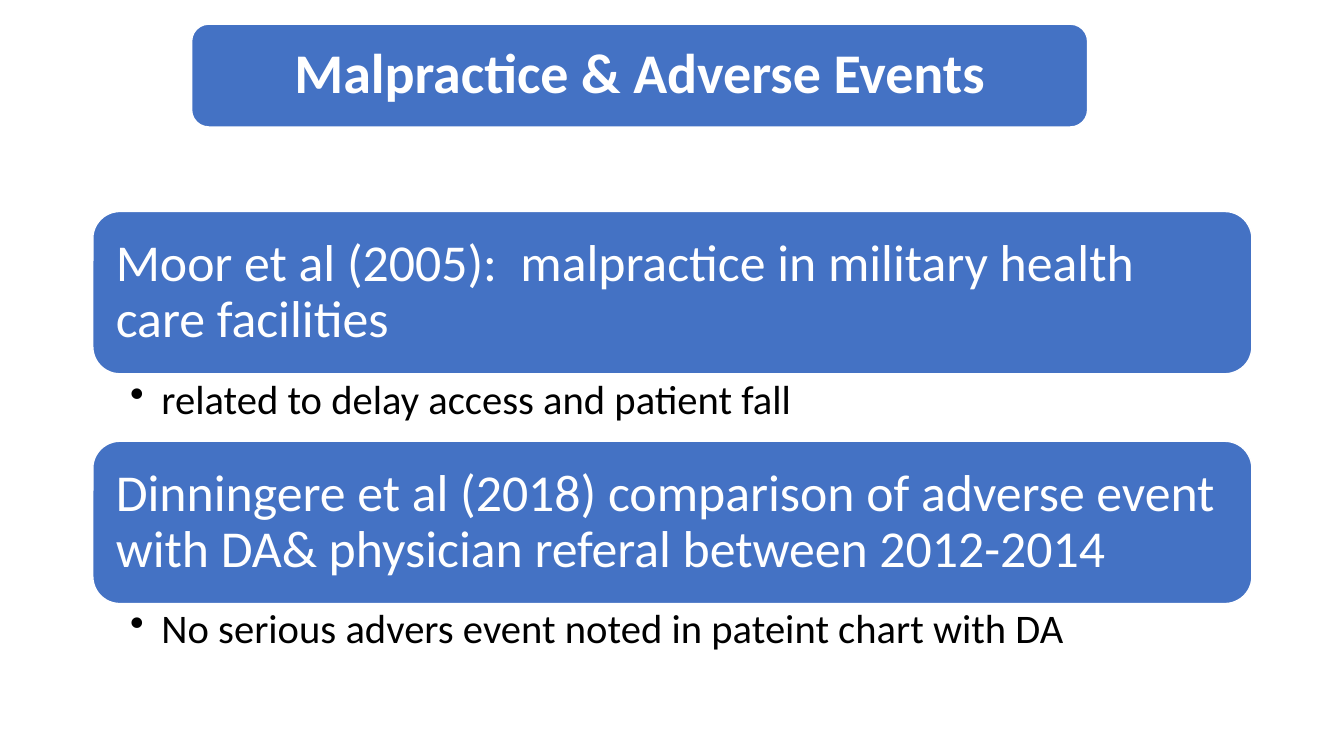
from lxml.etree import SubElement
from pptx import Presentation
from pptx.dml.color import RGBColor
from pptx.enum.shapes import MSO_SHAPE
from pptx.enum.text import MSO_ANCHOR, PP_ALIGN
from pptx.oxml.ns import qn
from pptx.util import Cm, Pt

COLORS = {"blue": "4472C4", "white": "FFFFFF", "black": "000000"}
LEFT, WIDTH = 2.34, 29.21
TOP, CARD, NOTE = 5.33, 4.09, 1.7
STUDIES = [
    ("Moor et al (2005):  malpractice in military health care facilities",
     "related to delay access and patient fall"),
    ("Dinningere et al (2018) comparison of adverse event with DA& physician "
     "referal between 2012-2014",
     "No serious advers event noted in pateint chart with DA"),
]


def color(name):
    return RGBColor.from_string(COLORS[name])


def write(frame, text, size, ink="white", bold=False, align=PP_ALIGN.LEFT,
          anchor=MSO_ANCHOR.MIDDLE, pads=(0.38,) * 4, indent=0):
    frame.word_wrap = True
    frame.vertical_anchor = anchor
    (frame.margin_left, frame.margin_top,
     frame.margin_right, frame.margin_bottom) = map(Cm, pads)
    para = frame.paragraphs[0]
    para.alignment = align
    para.line_spacing = 0.9
    run = para.add_run()
    run.text = text
    font = run.font
    font.name, font.size, font.bold = "Calibri", Pt(size), bold
    font.color.rgb = color(ink)
    if indent:
        para.level = 1
        props = para._p.get_or_add_pPr()
        props.set("marL", str(Cm(indent)))
        props.set("indent", str(-Cm(indent)))
        SubElement(props, qn("a:buChar")).set("char", "•")


class Deck:
    def __init__(self):
        self.file = Presentation()
        self.file.slide_width = Cm(33.87)
        self.file.slide_height = Cm(19.05)
        self.slide = self.file.slides.add_slide(self.file.slide_layouts[6])

    def card(self, box, text, **style):
        shape = self.slide.shapes.add_shape(
            MSO_SHAPE.ROUNDED_RECTANGLE, *map(Cm, box))
        shape.shadow.inherit = False
        shape.fill.solid()
        shape.fill.fore_color.rgb = color("blue")
        shape.line.color.rgb = color("white")
        shape.line.width = Pt(1)
        write(shape.text_frame, text, **style)

    def note(self, box, text, **style):
        shape = self.slide.shapes.add_textbox(*map(Cm, box))
        write(shape.text_frame, text, **style)


def main():
    deck = Deck()
    deck.card((4.83, 0.61, 22.58, 2.59), "Malpractice & Adverse Events",
              size=40, bold=True, align=PP_ALIGN.CENTER, pads=(0.41,) * 4)
    for row, (study, result) in enumerate(STUDIES):
        top = TOP + row * (CARD + NOTE)
        deck.card((LEFT, top, WIDTH, CARD), study, size=37)
        deck.note((LEFT, top + CARD, WIDTH, NOTE), result, size=29,
                  ink="black", anchor=MSO_ANCHOR.TOP,
                  pads=(0.94, 0.13, 0.74, 0.13), indent=0.79)
    deck.file.save("out.pptx")


if __name__ == "__main__":
    main()
